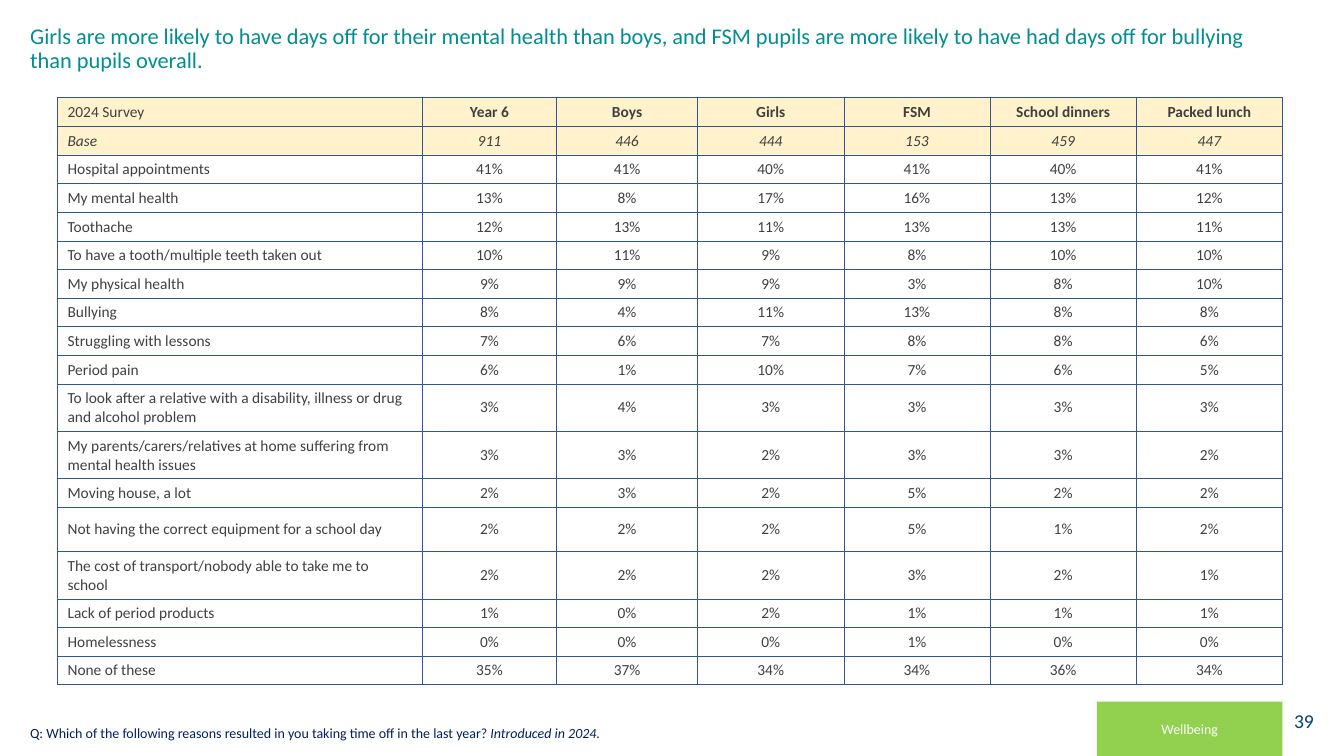
from dataclasses import dataclass

from lxml.etree import SubElement
from pptx import Presentation
from pptx.dml.color import RGBColor
from pptx.enum.shapes import MSO_SHAPE
from pptx.enum.text import MSO_ANCHOR, PP_ALIGN
from pptx.oxml.ns import qn
from pptx.slide import Slide
from pptx.table import Table, _Cell
from pptx.text.text import Font
from pptx.util import Inches, Pt

COLORS = {
    "title": "008E91",
    "question": "002060",
    "page": "004376",
    "text": "404040",
    "border": "2F5597",
    "header": "FFF2CC",
    "section": "92D050",
    "white": "FFFFFF",
}
GROUPS = ["Year 6", "Boys", "Girls", "FSM", "School dinners", "Packed lunch"]
BASES = [911, 446, 444, 153, 459, 447]
COLUMN_WIDTHS = [3.62, 1.33, 1.4, 1.45, 1.45, 1.45, 1.45]


@dataclass
class Reason:
    label: str
    percents: list[int]
    height: float = 0.28


@dataclass
class Block:
    text: str
    left: float
    top: float
    width: float
    height: float
    fill: str
    color: str
    size: int
    align: PP_ALIGN


REASONS = [
    Reason("Hospital appointments", [41, 41, 40, 41, 40, 41]),
    Reason("My mental health", [13, 8, 17, 16, 13, 12]),
    Reason("Toothache", [12, 13, 11, 13, 13, 11]),
    Reason("To have a tooth/multiple teeth taken out", [10, 11, 9, 8, 10, 10]),
    Reason("My physical health", [9, 9, 9, 3, 8, 10]),
    Reason("Bullying", [8, 4, 11, 13, 8, 8]),
    Reason("Struggling with lessons", [7, 6, 7, 8, 8, 6]),
    Reason("Period pain", [6, 1, 10, 7, 6, 5]),
    Reason("To look after a relative with a disability, illness or drug and alcohol problem",
           [3, 4, 3, 3, 3, 3], 0.47),
    Reason("My parents/carers/relatives at home suffering from mental health issues",
           [3, 3, 2, 3, 3, 2], 0.47),
    Reason("Moving house, a lot", [2, 3, 2, 5, 2, 2]),
    Reason("Not having the correct equipment for a school day", [2, 2, 2, 5, 1, 2], 0.44),
    Reason("The cost of transport/nobody able to take me to school", [2, 2, 2, 3, 2, 1], 0.47),
    Reason("Lack of period products", [1, 0, 2, 1, 1, 1]),
    Reason("Homelessness", [0, 0, 0, 1, 0, 0]),
    Reason("None of these", [35, 37, 34, 34, 36, 34]),
]
BLOCKS = [
    Block("39", 12.54, 6.95, 0.59, 0.4, "white", "page", 14, PP_ALIGN.RIGHT),
    Block("Wellbeing", 10.88, 6.96, 1.84, 0.54, "section", "white", 10, PP_ALIGN.CENTER),
]


def style_font(font: Font, size: int, color: str, bold: bool = False) -> None:
    font.name = "Calibri"
    font.size = Pt(size)
    font.bold = bold
    font.color.rgb = RGBColor.from_string(COLORS[color])


def add_borders(cell: _Cell) -> None:
    properties = cell._tc.get_or_add_tcPr()
    for side in ("a:lnL", "a:lnR", "a:lnT", "a:lnB"):
        line = SubElement(properties, qn(side), w=str(Pt(0.5)))
        solid = SubElement(line, qn("a:solidFill"))
        SubElement(solid, qn("a:srgbClr"), val=COLORS["border"])


def fill_row(table: Table, row: int, values: list[str]) -> None:
    for column, value in enumerate(values):
        cell = table.cell(row, column)
        cell.text = value
        cell.vertical_anchor = MSO_ANCHOR.TOP if row == 0 else MSO_ANCHOR.MIDDLE
        add_borders(cell)
        if row < 2:
            cell.fill.solid()
            cell.fill.fore_color.rgb = RGBColor.from_string(COLORS["header"])
        else:
            cell.fill.background()
        paragraph = cell.text_frame.paragraphs[0]
        paragraph.alignment = PP_ALIGN.CENTER if column else PP_ALIGN.LEFT
        style_font(paragraph.font, 11, "text", bold=row == 0 and column > 0)
        paragraph.font.italic = row == 1


def add_title(slide: Slide) -> None:
    title = slide.shapes.title
    title.left, title.top = Inches(0.2), Inches(0.2)
    title.width, title.height = Inches(12.68), Inches(0.98)
    title.text_frame.text = (
        "Girls are more likely to have days off for their mental health than boys, "
        "and FSM pupils are more likely to have had days off for bullying than pupils overall."
    )
    title.text_frame.vertical_anchor = MSO_ANCHOR.TOP
    title.text_frame.word_wrap = True
    paragraph = title.text_frame.paragraphs[0]
    paragraph.alignment = PP_ALIGN.LEFT
    paragraph.line_spacing = 0.9
    style_font(paragraph.font, 16, "title")


def add_question(slide: Slide) -> None:
    question = slide.shapes.add_textbox(Inches(0.2), Inches(7.13), Inches(10.25), Inches(0.27))
    question.text_frame.word_wrap = True
    question.text_frame.vertical_anchor = MSO_ANCHOR.BOTTOM
    paragraph = question.text_frame.paragraphs[0]
    style_font(paragraph.font, 10, "question")
    wording = paragraph.add_run()
    wording.text = "Q: Which of the following reasons resulted in you taking time off in the last year? "
    remark = paragraph.add_run()
    remark.text = "Introduced in 2024."
    for run in (wording, remark):
        style_font(run.font, 10, "question")
    remark.font.italic = True


def add_survey_table(slide: Slide) -> None:
    heights = [0.28, 0.28] + [reason.height for reason in REASONS]
    table = slide.shapes.add_table(
        len(heights), len(COLUMN_WIDTHS), Inches(0.57), Inches(0.97),
        Inches(sum(COLUMN_WIDTHS)), Inches(sum(heights)),
    ).table
    table.first_row = False
    table.horz_banding = False
    for column, width in zip(table.columns, COLUMN_WIDTHS):
        column.width = Inches(width)
    for row, height in zip(table.rows, heights):
        row.height = Inches(height)
    fill_row(table, 0, ["2024 Survey", *GROUPS])
    fill_row(table, 1, ["Base", *map(str, BASES)])
    for row, reason in enumerate(REASONS, start=2):
        fill_row(table, row, [reason.label, *(f"{percent}%" for percent in reason.percents)])


def add_block(slide: Slide, block: Block) -> None:
    shape = slide.shapes.add_shape(
        MSO_SHAPE.RECTANGLE, Inches(block.left), Inches(block.top),
        Inches(block.width), Inches(block.height),
    )
    shape.shadow.inherit = False
    shape.fill.solid()
    shape.fill.fore_color.rgb = RGBColor.from_string(COLORS[block.fill])
    shape.line.fill.background()
    shape.text_frame.text = block.text
    shape.text_frame.vertical_anchor = MSO_ANCHOR.MIDDLE
    paragraph = shape.text_frame.paragraphs[0]
    paragraph.alignment = block.align
    style_font(paragraph.font, block.size, block.color)


def main() -> None:
    presentation = Presentation()
    presentation.slide_width = Inches(13.33)
    presentation.slide_height = Inches(7.5)
    slide = presentation.slides.add_slide(presentation.slide_layouts[5])
    add_title(slide)
    add_question(slide)
    add_survey_table(slide)
    for block in BLOCKS:
        add_block(slide, block)
    presentation.save("out.pptx")


if __name__ == "__main__":
    main()
